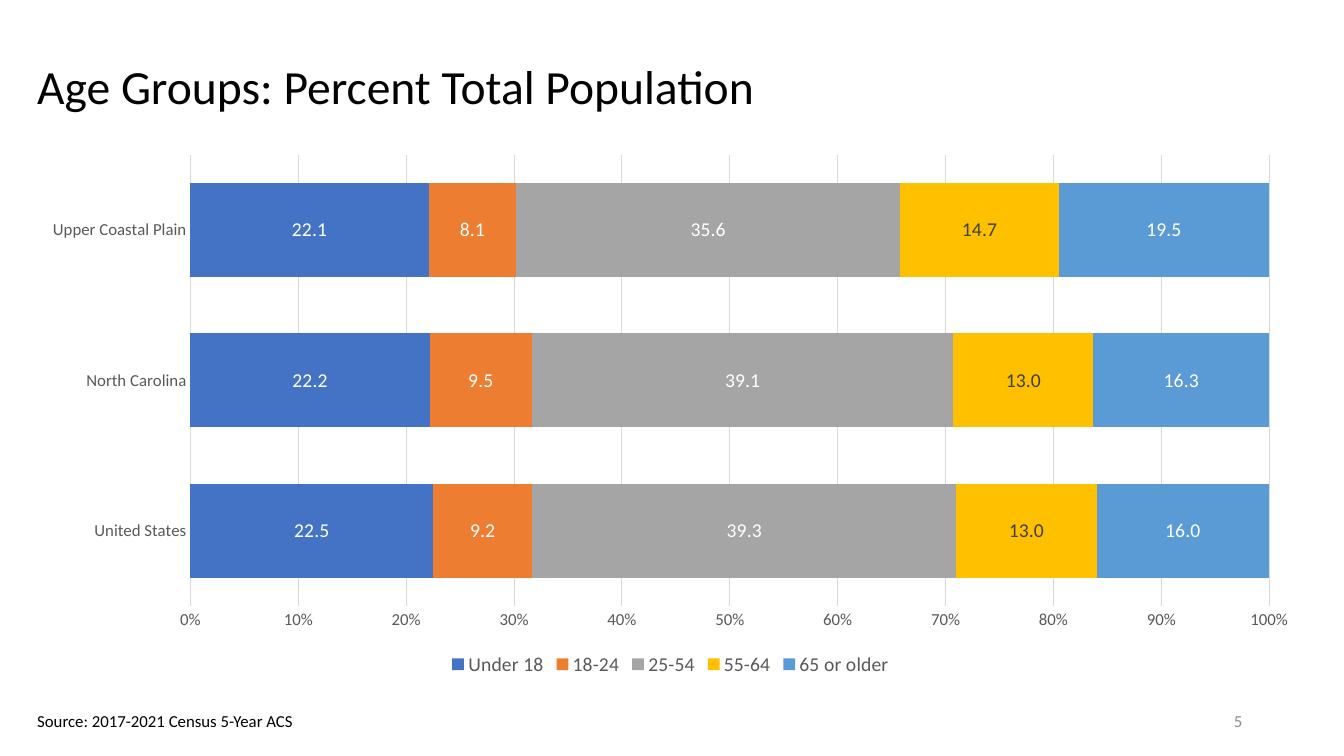
from pptx import Presentation
from pptx.chart.data import CategoryChartData
from pptx.dml.color import RGBColor
from pptx.enum.chart import XL_CHART_TYPE, XL_LABEL_POSITION, XL_LEGEND_POSITION, XL_TICK_MARK
from pptx.enum.text import MSO_ANCHOR, PP_ALIGN
from pptx.util import Inches, Pt

FONT = "Calibri"
GRAY = "595959"
RULE = "D9D9D9"
REGIONS = ["United States", "North Carolina", "Upper Coastal Plain"]
AGE_GROUPS = [
    ("Under 18", (22.5, 22.2, 22.1), "4472C4", "FFFFFF"),
    ("18-24", (9.2, 9.5, 8.1), "ED7D31", "FFFFFF"),
    ("25-54", (39.3, 39.1, 35.6), "A5A5A5", "FFFFFF"),
    ("55-64", (13.0, 13.0, 14.7), "FFC000", "404040"),
    ("65 or older", (16.0, 16.3, 19.5), "5B9BD5", "FFFFFF"),
]


def rgb(value):
    """Turn a hex string into a colour."""
    return RGBColor.from_string(value)


def style_font(font, size, color):
    """Set the typeface, size and colour of a font."""
    font.name = FONT
    font.size = Pt(size)
    font.color.rgb = rgb(color)


def style_line(line, color):
    """Draw a thin rule in the given colour."""
    line.color.rgb = rgb(color)
    line.width = Pt(0.75)


def add_text(slide, box, text, size=12, color="000000", align=PP_ALIGN.LEFT,
             anchor=MSO_ANCHOR.TOP, wrap=True, spacing=1.0):
    """Place one paragraph of text in a box given in inches."""
    frame = slide.shapes.add_textbox(*map(Inches, box)).text_frame
    frame.word_wrap = wrap
    frame.vertical_anchor = anchor
    paragraph = frame.paragraphs[0]
    paragraph.alignment = align
    paragraph.line_spacing = spacing
    run = paragraph.add_run()
    run.text = text
    style_font(run.font, size, color)


def style_axes(chart):
    """Format the region axis and the percent axis."""
    regions, percent = chart.category_axis, chart.value_axis
    for axis in (regions, percent):
        axis.major_tick_mark = XL_TICK_MARK.NONE
        axis.minor_tick_mark = XL_TICK_MARK.NONE
        style_font(axis.tick_labels.font, 12, GRAY)
    style_line(regions.format.line, RULE)
    percent.format.line.fill.background()
    percent.has_major_gridlines = True
    style_line(percent.major_gridlines.format.line, RULE)
    percent.minimum_scale = 0
    percent.maximum_scale = 1
    percent.major_unit = 0.1
    percent.tick_labels.number_format = "0%"
    percent.tick_labels.number_format_is_linked = False


def add_age_chart(slide, box):
    """Chart the share of each age group by region."""
    data = CategoryChartData(number_format="#,##0.0")
    data.categories = REGIONS
    for name, shares, _, _ in AGE_GROUPS:
        data.add_series(name, shares)
    chart = slide.shapes.add_chart(
        XL_CHART_TYPE.BAR_STACKED_100, *map(Inches, box), data).chart
    style_font(chart.font, 10, "000000")
    chart.has_title = False
    chart.has_legend = True
    chart.legend.position = XL_LEGEND_POSITION.BOTTOM
    chart.legend.include_in_layout = False
    style_font(chart.legend.font, 14, GRAY)
    style_axes(chart)

    plot = chart.plots[0]
    plot.gap_width = 60
    plot.overlap = 100
    plot.vary_by_categories = False
    for series, (_, _, fill, label_color) in zip(plot.series, AGE_GROUPS):
        series.format.fill.solid()
        series.format.fill.fore_color.rgb = rgb(fill)
        labels = series.data_labels
        labels.show_value = True
        labels.position = XL_LABEL_POSITION.CENTER
        labels.number_format = "#,##0.0"
        labels.number_format_is_linked = False
        style_font(labels.font, 14, label_color)


def add_footer(slide, left, top):
    """Place the source note and the slide number."""
    add_text(slide, (left, top, 2.78, 0.3), "Source: 2017-2021 Census 5-Year ACS", wrap=False)
    add_text(slide, (left + 9.15, top - 0.05, 3, 0.4), "5", color="8C8C8C",
             align=PP_ALIGN.RIGHT, anchor=MSO_ANCHOR.MIDDLE)


def main():
    """Build and save the slide."""
    deck = Presentation()
    deck.slide_width = Inches(13.33)
    deck.slide_height = Inches(7.5)
    slide = deck.slides.add_slide(deck.slide_layouts[6])
    left, width = 0.27, 12.76
    add_text(slide, (left, 0.34, width, 1.09), "Age Groups: Percent Total Population",
             size=34, anchor=MSO_ANCHOR.MIDDLE, spacing=0.9)
    add_age_chart(slide, (left, 1.43, width, 5.32))
    add_footer(slide, left, 7)
    deck.save("out.pptx")


if __name__ == "__main__":
    main()
